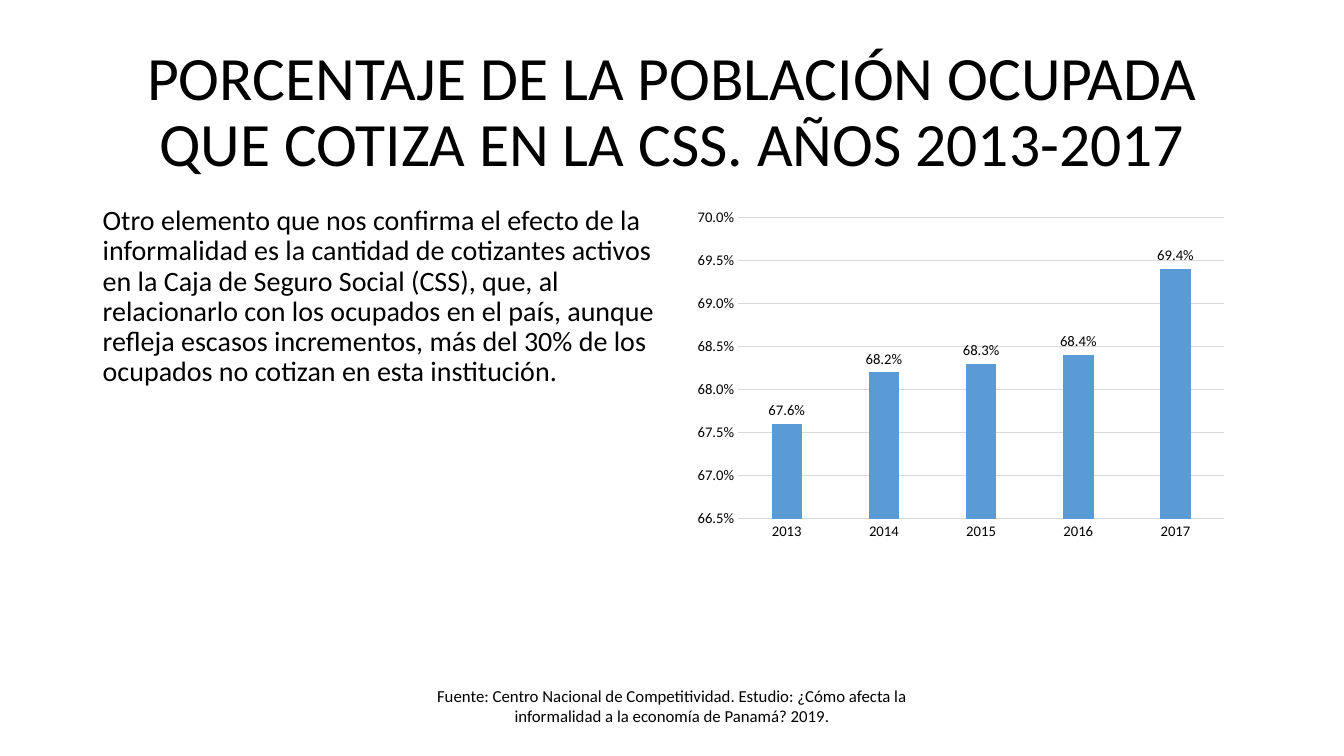
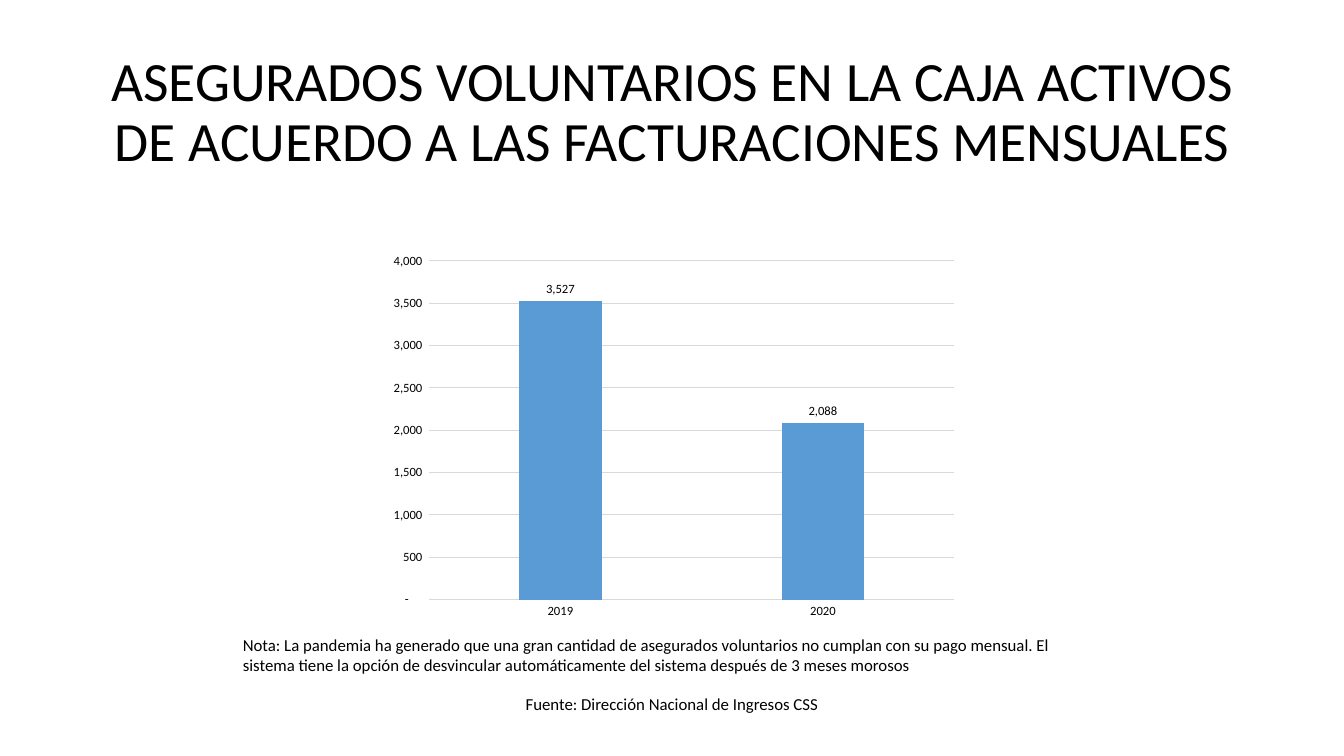
from pptx import Presentation
from pptx.chart.data import CategoryChartData as Data
from pptx.dml.color import RGBColor
from pptx.enum.chart import XL_CHART_TYPE as Kind, XL_LABEL_POSITION as Spot, XL_TICK_MARK as Tick
from pptx.enum.text import MSO_ANCHOR as Anchor, PP_ALIGN as Align
from pptx.util import Inches, Pt


def tint(code):
    return RGBColor.from_string(code)


class Deck:
    font = "Calibri"
    ink = "000000"
    rule = "D9D9D9"
    bar = "5B9BD5"

    def __init__(self):
        self.file = Presentation()
        self.file.slide_width = Inches(13.33)
        self.file.slide_height = Inches(7.5)
        self.slide = None

    def page(self, title, size):
        self.slide = self.file.slides.add_slide(self.file.slide_layouts[6])
        self.text((0.92, 0.4, 11.5, 1.45), [title], size, Align.CENTER, 0.9,
                  anchor=Anchor.MIDDLE)

    def style(self, font, size):
        font.name = self.font
        font.size = Pt(size)
        font.color.rgb = tint(self.ink)

    def text(self, box, lines, size, align=Align.LEFT, lead=1.0, anchor=Anchor.TOP):
        frame = self.slide.shapes.add_textbox(*map(Inches, box)).text_frame
        frame.word_wrap = True
        frame.vertical_anchor = anchor
        for i, line in enumerate(lines):
            para = frame.add_paragraph() if i else frame.paragraphs[0]
            para.alignment = align
            para.line_spacing = lead
            run = para.add_run()
            run.text = line
            self.style(run.font, size)

    def source(self, top, height, lines):
        self.text((2.92, top, 7.49, height), lines, 12, Align.CENTER)

    def stroke(self, line):
        line.color.rgb = tint(self.rule)
        line.width = Pt(0.75)

    def chart(self, box, values, size, scale, form, label):
        data = Data()
        data.categories = list(values)
        data.add_series("Series 1", list(values.values()))
        chart = self.slide.shapes.add_chart(
            Kind.COLUMN_CLUSTERED, *map(Inches, box), data).chart
        chart.has_legend = False
        chart.has_title = False
        self.style(chart.font, size)

        cats, vals = chart.category_axis, chart.value_axis
        for axis in (cats, vals):
            axis.major_tick_mark = axis.minor_tick_mark = Tick.NONE
            self.style(axis.tick_labels.font, size)
        self.stroke(cats.format.line)
        self.stroke(vals.major_gridlines.format.line)
        vals.format.line.fill.background()
        vals.minimum_scale, vals.maximum_scale, vals.major_unit = scale
        vals.tick_labels.number_format = form
        vals.tick_labels.number_format_is_linked = False

        plot = chart.plots[0]
        plot.vary_by_categories = False
        plot.gap_width = 219
        plot.overlap = -27
        fill = plot.series[0].format.fill
        fill.solid()
        fill.fore_color.rgb = tint(self.bar)
        plot.has_data_labels = True
        tags = plot.data_labels
        tags.show_value = True
        tags.position = Spot.OUTSIDE_END
        tags.number_format = label
        tags.number_format_is_linked = False
        self.style(tags.font, size)


def main():
    deck = Deck()

    deck.page("PORCENTAJE DE LA POBLACIÓN OCUPADA QUE COTIZA EN LA CSS. AÑOS 2013-2017", 44)
    deck.text((0.92, 2, 5.75, 4.76), [
        "Otro elemento que nos confirma el efecto de la informalidad es la cantidad de "
        "cotizantes activos en la Caja de Seguro Social (CSS), que, al relacionarlo con los "
        "ocupados en el país, aunque refleja escasos incrementos, más del 30% de los "
        "ocupados no cotizan en esta institución."], 20, lead=0.9)
    deck.source(6.75, 0.5, [
        "Fuente: Centro Nacional de Competitividad. Estudio: ¿Cómo afecta la",
        "informalidad a la economía de Panamá? 2019."])
    share = {"2013": 0.676, "2014": 0.682, "2015": 0.683, "2016": 0.684, "2017": 0.694}
    deck.chart((6.81, 2, 5.44, 3.43), share, 10.5, (0.665, 0.7, 0.005), "0.0%", "0.0%")

    deck.page("ASEGURADOS VOLUNTARIOS EN LA CAJA ACTIVOS DE ACUERDO A LAS "
              "FACTURACIONES MENSUALES", 39.6)
    deck.chart((3.76, 2.44, 5.82, 3.77), {"2019": 3527, "2020": 2088}, 9, (0, 4000, 500),
               '_-* #,##0_-;\\-* #,##0_-;_-* "-"??_-;_-@_', "#,##0")
    deck.source(6.83, 0.3, ["Fuente: Dirección Nacional de Ingresos CSS"])
    deck.text((2.31, 6.25, 8.71, 0.5), [
        "Nota: La pandemia ha generado que una gran cantidad de asegurados voluntarios no "
        "cumplan con su pago mensual. El sistema tiene la opción de desvincular "
        "automáticamente del sistema después de 3 meses morosos"], 12)

    deck.file.save("out.pptx")


if __name__ == "__main__":
    main()
